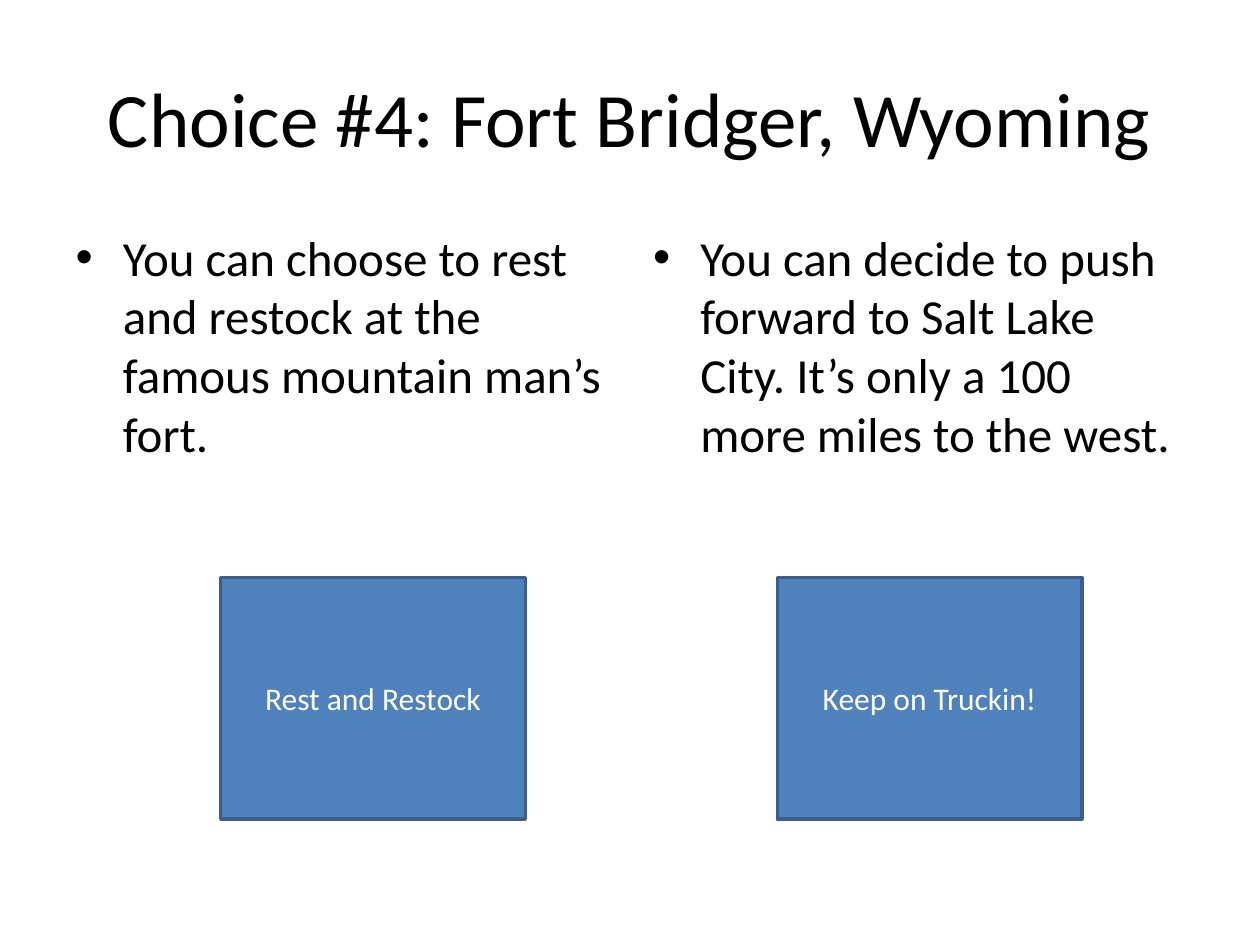
from pptx import Presentation
from pptx import util as u
from pptx.dml import color
from pptx.enum import shapes, text

TITLE = "Choice #4: Fort Bridger, Wyoming"
CHOICES = [
    ("You can choose to rest and restock at the famous mountain man’s fort.",
     "Rest and Restock"),
    ("You can decide to push forward to Salt Lake City. "
     "It’s only a 100 more miles to the west.",
     "Keep on Truckin!"),
]
COLOURS = {"text": "000000", "button": "4F81BD", "edge": "3A5F8C", "label": "FFFFFF"}
FONT = "Calibri"

# Lengths in centimetres
TITLE_BOX = (1.27, 0.76, 22.86, 3.18)
BODY_BOX = (1.27, 4.45, 11.22, 12.57)
BODY_STEP = 11.64
BUTTON_BOX = (4.45, 11.64, 6.14, 4.87)
BUTTON_STEP = 11.22


def rgb(name):
    return color.RGBColor.from_string(COLOURS[name])


def place(shape, box, shift=0):
    left, top, width, height = box
    shape.left, shape.top = u.Cm(left + shift), u.Cm(top)
    shape.width, shape.height = u.Cm(width), u.Cm(height)


def write(shape, words, size, colour, align=None, anchor=text.MSO_ANCHOR.TOP):
    frame = shape.text_frame
    frame.word_wrap = True
    frame.vertical_anchor = anchor
    para = frame.paragraphs[0]
    para.alignment = align
    span = para.add_run()
    span.text = words
    span.font.name = FONT
    span.font.size = u.Pt(size)
    span.font.color.rgb = rgb(colour)


def add_button(page, label, shift):
    left, top, width, height = BUTTON_BOX
    button = page.shapes.add_shape(
        shapes.MSO_SHAPE.ACTION_BUTTON_CUSTOM,
        u.Cm(left + shift), u.Cm(top), u.Cm(width), u.Cm(height))
    button.shadow.inherit = False
    button.fill.solid()
    button.fill.fore_color.rgb = rgb("button")
    button.line.color.rgb = rgb("edge")
    button.line.width = u.Pt(2)
    write(button, label, 18, "label", text.PP_ALIGN.CENTER, text.MSO_ANCHOR.MIDDLE)


def main():
    deck = Presentation()
    deck.slide_width, deck.slide_height = u.Cm(25.4), u.Cm(19.05)
    page = deck.slides.add_slide(deck.slide_layouts.get_by_name("Two Content"))

    title = page.shapes.title
    place(title, TITLE_BOX)
    write(title, TITLE, 44, "text", text.PP_ALIGN.CENTER, text.MSO_ANCHOR.MIDDLE)

    for column, (description, label) in enumerate(CHOICES):
        body = page.placeholders[column + 1]
        place(body, BODY_BOX, column * BODY_STEP)
        write(body, description, 28, "text")
        add_button(page, label, column * BUTTON_STEP)

    deck.save("out.pptx")


if __name__ == "__main__":
    main()
